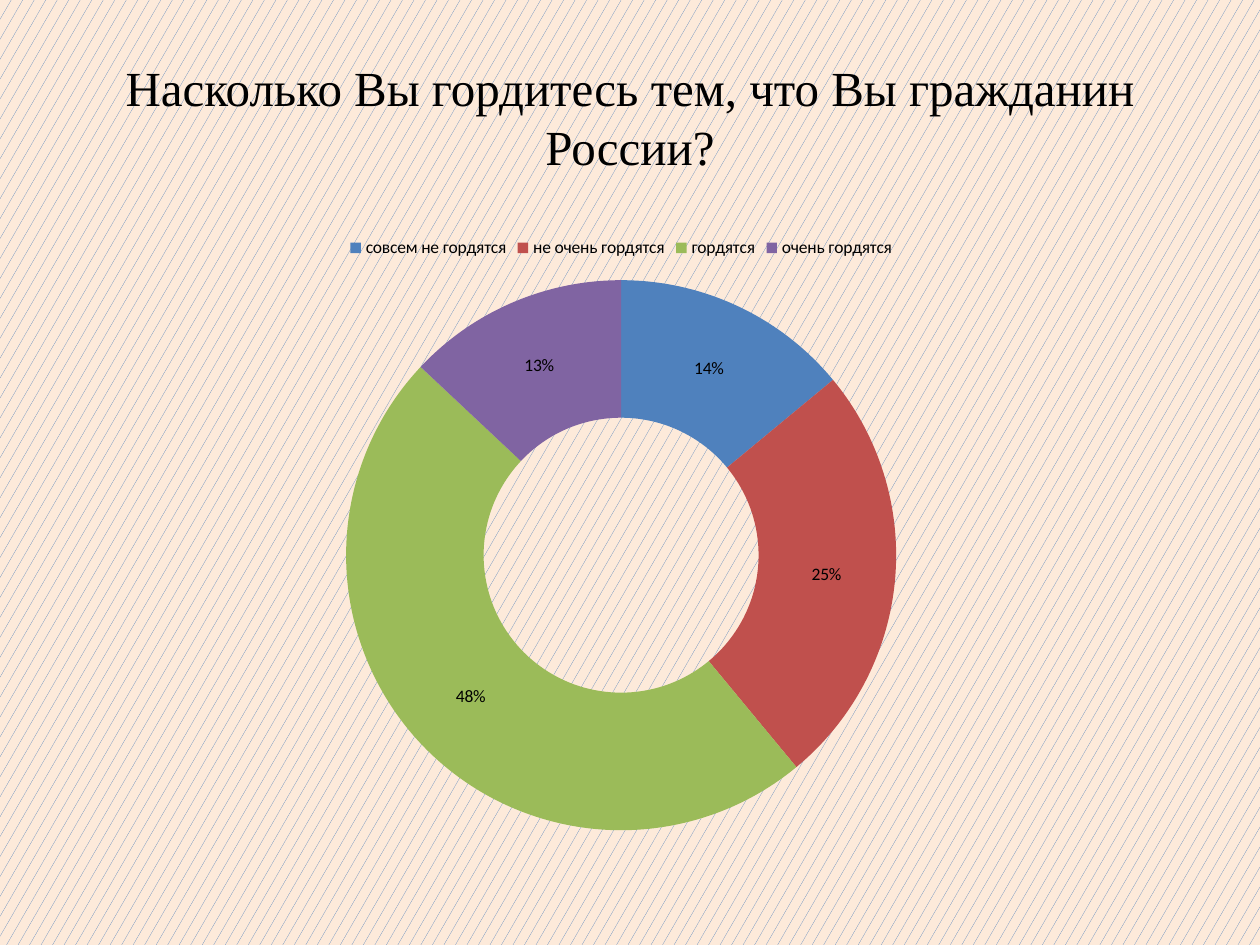
from dataclasses import dataclass
from typing import Any

from pptx import Presentation
from pptx import util as u
from pptx.chart.data import CategoryChartData
from pptx.dml.color import RGBColor
from pptx.enum import chart as charts, dml, text

BLACK = RGBColor(0x00, 0x00, 0x00)
CREAM = RGBColor(0xFD, 0xEA, 0xDA)
BLUE = RGBColor(0x4F, 0x81, 0xBD)
RED = RGBColor(0xC0, 0x50, 0x4D)
GREEN = RGBColor(0x9B, 0xBB, 0x59)
PURPLE = RGBColor(0x80, 0x64, 0xA2)

ANSWERS = [
    ("совсем не гордятся", 14, BLUE),
    ("не очень гордятся", 25, RED),
    ("гордятся", 48, GREEN),
    ("очень гордятся", 13, PURPLE),
]


@dataclass
class Deck:
    """Style and current slide; boxes are shares of the slide's size."""

    prs: Any
    s: Any
    title_font: str = "Times New Roman"
    chart_font: str = "Calibri"

    def box(self, x, y, w, h):
        width, height = self.prs.slide_width, self.prs.slide_height
        return [round(v) for v in (x * width, y * height, w * width, h * height)]

    def background(self, fore, back):
        fill = self.s.background.fill
        fill.patterned()
        fill.pattern = dml.MSO_PATTERN.SMALL_CONFETTI
        fill.fore_color.rgb = fore
        fill.back_color.rgb = back

    def title(self, words, *share, size=28):
        tf = self.s.shapes.add_textbox(*self.box(*share)).text_frame
        tf.word_wrap = True
        tf.vertical_anchor = text.MSO_ANCHOR.MIDDLE
        p = tf.paragraphs[0]
        p.alignment = text.PP_ALIGN.CENTER
        r = p.add_run()
        r.text = words
        self.style(r.font, self.title_font, size)

    def style(self, font, name, size):
        font.name = name
        font.size = u.Pt(size)
        font.color.rgb = BLACK

    def doughnut(self, answers, *share, size=10):
        names, values, colors = zip(*answers)
        data = CategoryChartData()
        data.categories = names
        data.add_series("Series 1", values)
        kind = charts.XL_CHART_TYPE.DOUGHNUT
        chart = self.s.shapes.add_chart(kind, *self.box(*share), data).chart
        self.style(chart.font, self.chart_font, size)
        chart.has_title = False
        chart.has_legend = True
        chart.legend.position = charts.XL_LEGEND_POSITION.TOP
        chart.legend.include_in_layout = False
        plot = chart.plots[0]
        plot.vary_by_categories = True
        plot.has_data_labels = True
        labels = plot.data_labels
        labels.show_percentage = True
        labels.show_value = False
        labels.number_format = "0%"
        labels.number_format_is_linked = False
        for i, color in enumerate(colors):
            fill = plot.series[0].points[i].format.fill
            fill.solid()
            fill.fore_color.rgb = color


def main():
    prs = Presentation()
    prs.slide_width, prs.slide_height = u.Inches(10), u.Inches(7.5)
    deck = Deck(prs, prs.slides.add_slide(prs.slide_layouts[6]))
    deck.background(BLUE, CREAM)
    deck.title("Насколько Вы гордитесь тем, что Вы гражданин России?",
               0.05, 0.04, 0.9, 1 / 6)
    deck.doughnut(ANSWERS, 0.043, 0.237, 0.9, 0.66)
    prs.save("out.pptx")


if __name__ == "__main__":
    main()
